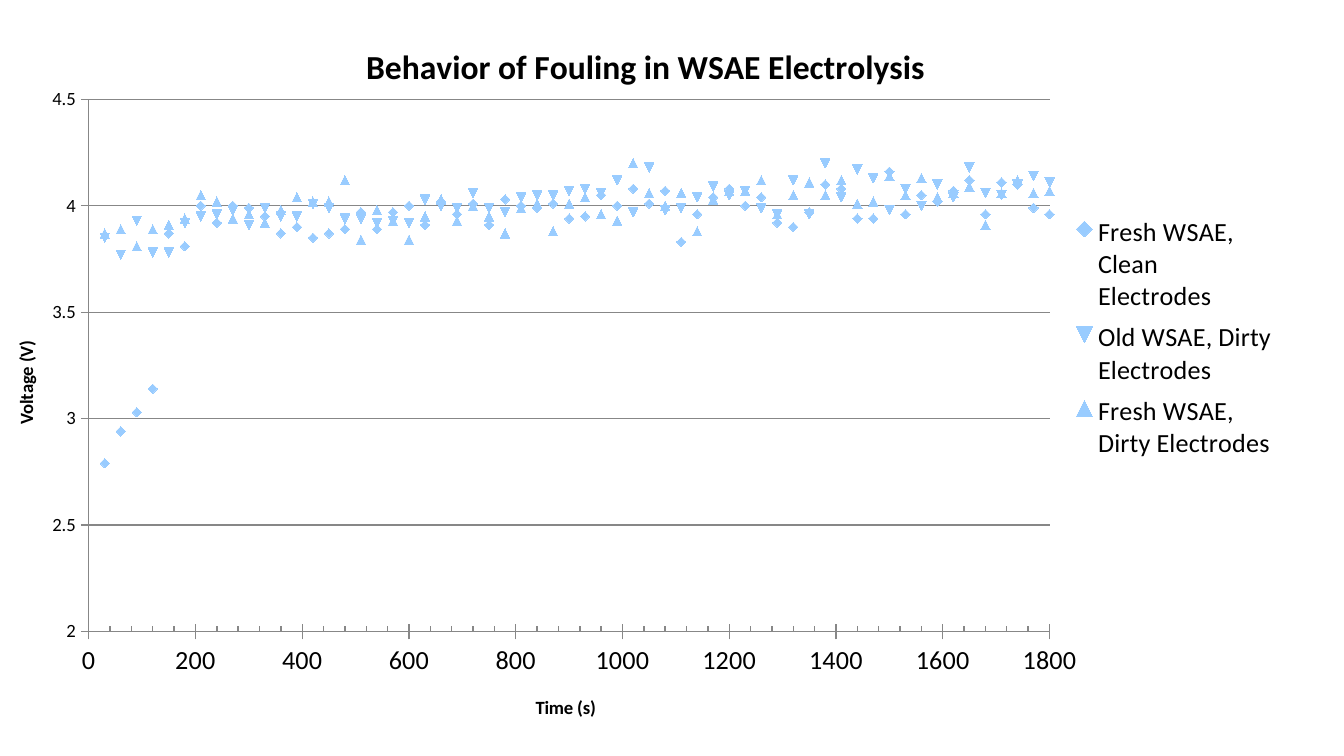
"""Build a slide with a scatter chart of electrode fouling voltage over time."""
import pptx
import pptx.chart.data
import pptx.dml.color
import pptx.enum.chart
import pptx.oxml
import pptx.oxml.ns
import pptx.util

Inches, Pt = pptx.util.Inches, pptx.util.Pt
RGBColor = pptx.dml.color.RGBColor
TICK = pptx.enum.chart.XL_TICK_MARK

BLACK = RGBColor(0x00, 0x00, 0x00)
GRAY = RGBColor(0x87, 0x87, 0x87)
LIGHT_BLUE = RGBColor(0x99, 0xCC, 0xFF)
FONT = "Calibri"
CHART_W, CHART_H = 9.5, 5.3

TITLE = "Behavior of Fouling in WSAE Electrolysis"
TIMES = range(30, 1801, 30)
SERIES = {
    "Fresh WSAE, Clean Electrodes": [
        2.79, 2.94, 3.03, 3.14, 3.87, 3.81, 4, 3.92, 4, 3.99, 3.95, 3.87, 3.9, 3.85, 3.87,
        3.89, 3.97, 3.89, 3.97, 4, 3.91, 4.02, 3.96, 4.01, 3.91, 4.03, 4, 3.99, 4.01, 3.94,
        3.95, 4.05, 4, 4.08, 4.01, 4.07, 3.83, 3.96, 4.04, 4.08, 4, 4.04, 3.92, 3.9, 3.97,
        4.1, 4.08, 3.94, 3.94, 4.16, 3.96, 4.05, 4.02, 4.07, 4.12, 3.96, 4.11, 4.1, 3.99, 3.96],
    "Old WSAE, Dirty Electrodes": [
        3.85, 3.77, 3.93, 3.78, 3.78, 3.92, 3.95, 3.96, 3.98, 3.91, 3.99, 3.95, 3.95, 4.01, 3.99,
        3.94, 3.94, 3.92, 3.93, 3.92, 4.03, 4, 3.99, 4.06, 3.99, 3.97, 4.04, 4.05, 4.05, 4.07,
        4.08, 4.06, 4.12, 3.97, 4.18, 3.98, 3.99, 4.04, 4.09, 4.05, 4.07, 3.99, 3.96, 4.12, 3.96,
        4.2, 4.04, 4.17, 4.13, 3.98, 4.08, 4, 4.1, 4.04, 4.18, 4.06, 4.05, 4.1, 4.14, 4.11],
    "Fresh WSAE, Dirty Electrodes": [
        3.87, 3.89, 3.81, 3.89, 3.91, 3.94, 4.05, 4.02, 3.94, 3.96, 3.92, 3.98, 4.04, 4.02, 4.02,
        4.12, 3.84, 3.98, 3.93, 3.84, 3.95, 4.03, 3.93, 4, 3.95, 3.87, 3.99, 4.01, 3.88, 4.01,
        4.04, 3.96, 3.93, 4.2, 4.06, 4, 4.06, 3.88, 4.03, 4.07, 4.07, 4.12, 3.96, 4.05, 4.11,
        4.05, 4.12, 4.01, 4.02, 4.14, 4.05, 4.13, 4.04, 4.06, 4.09, 3.91, 4.06, 4.12, 4.06, 4.07],
}
X_AXIS = dict(minimum_scale=0, maximum_scale=1800, major_unit=200, minor_unit=40,
              major_tick_mark=TICK.CROSS, minor_tick_mark=TICK.INSIDE, has_major_gridlines=False)
Y_AXIS = dict(minimum_scale=2, maximum_scale=4.5, major_unit=0.5,
              major_tick_mark=TICK.OUTSIDE, minor_tick_mark=TICK.NONE, has_major_gridlines=True)


def set_attrs(obj, values):
    for name, value in values.items():
        setattr(obj, name, value)


def set_font(font, size, bold=False):
    set_attrs(font, dict(name=FONT, size=Pt(size), bold=bold))
    font.color.rgb = BLACK


def set_layout(element, before, target=None, **inches):
    for old in element.findall(pptx.oxml.ns.qn("c:layout")):
        element.remove(old)
    parts = f'<c:layoutTarget val="{target}"/>' if target else ""
    parts += '<c:xMode val="edge"/><c:yMode val="edge"/>'
    for key, value in inches.items():
        parts += f'<c:{key} val="{value / (CHART_W if key in "xw" else CHART_H):.4f}"/>'
    layout = pptx.oxml.parse_xml(
        f'<c:layout {pptx.oxml.ns.nsdecls("c")}><c:manualLayout>{parts}</c:manualLayout></c:layout>')
    element.find(pptx.oxml.ns.qn(before)).addprevious(layout)


def set_title(title, text, size, x, y):
    r = title.text_frame.paragraphs[0].add_run()
    r.text = text
    set_font(r.font, size, True)
    set_layout(title._element, "c:overlay", x=x, y=y)


def main():
    prs = pptx.Presentation()
    prs.slide_width, prs.slide_height = Inches(10), Inches(5.625)
    s = prs.slides.add_slide(prs.slide_layouts[6])

    data = pptx.chart.data.XyChartData()
    for name, volts in SERIES.items():
        series = data.add_series(name)
        for time, volt in zip(TIMES, volts):
            series.add_data_point(time, volt)
    chart = s.shapes.add_chart(pptx.enum.chart.XL_CHART_TYPE.XY_SCATTER, Inches(0.08),
                               Inches(0.15), Inches(CHART_W), Inches(CHART_H), data).chart
    set_font(chart.font, 10)

    plot = chart.plots[0]
    plot.vary_by_categories = False
    for series in plot.series:
        series.smooth = False
        series.format.line.fill.background()
        series.marker.size = 5
        series.marker.format.fill.solid()
        series.marker.format.fill.fore_color.rgb = LIGHT_BLUE
        series.marker.format.line.fill.background()

    for axis, values, size in ((chart.category_axis, X_AXIS, 14), (chart.value_axis, Y_AXIS, 10)):
        set_attrs(axis, values)
        set_font(axis.tick_labels.font, size)
        set_attrs(axis.tick_labels, dict(number_format="General", number_format_is_linked=False))
        axis.format.line.color.rgb = GRAY
    chart.value_axis.major_gridlines.format.line.color.rgb = GRAY

    chart.has_title = True
    set_title(chart.chart_title, TITLE, 18, 2.6, 0.13)
    set_title(chart.category_axis.axis_title, "Time (s)", 10, 3.88, 5)
    set_title(chart.value_axis.axis_title, "Voltage (V)", 10, 0, 2.36)

    chart.has_legend = True
    legend = chart.legend
    set_attrs(legend, dict(position=pptx.enum.chart.XL_LEGEND_POSITION.RIGHT, include_in_layout=False))
    set_font(legend.font, 14)
    set_layout(legend._element, "c:overlay", x=8.01, y=1.39, w=1.55, h=1.95)
    set_layout(plot._element.getparent(), "c:scatterChart", "inner", x=0.58, y=0.59, w=7.15, h=3.96)
    prs.save("out.pptx")


if __name__ == "__main__":
    main()
